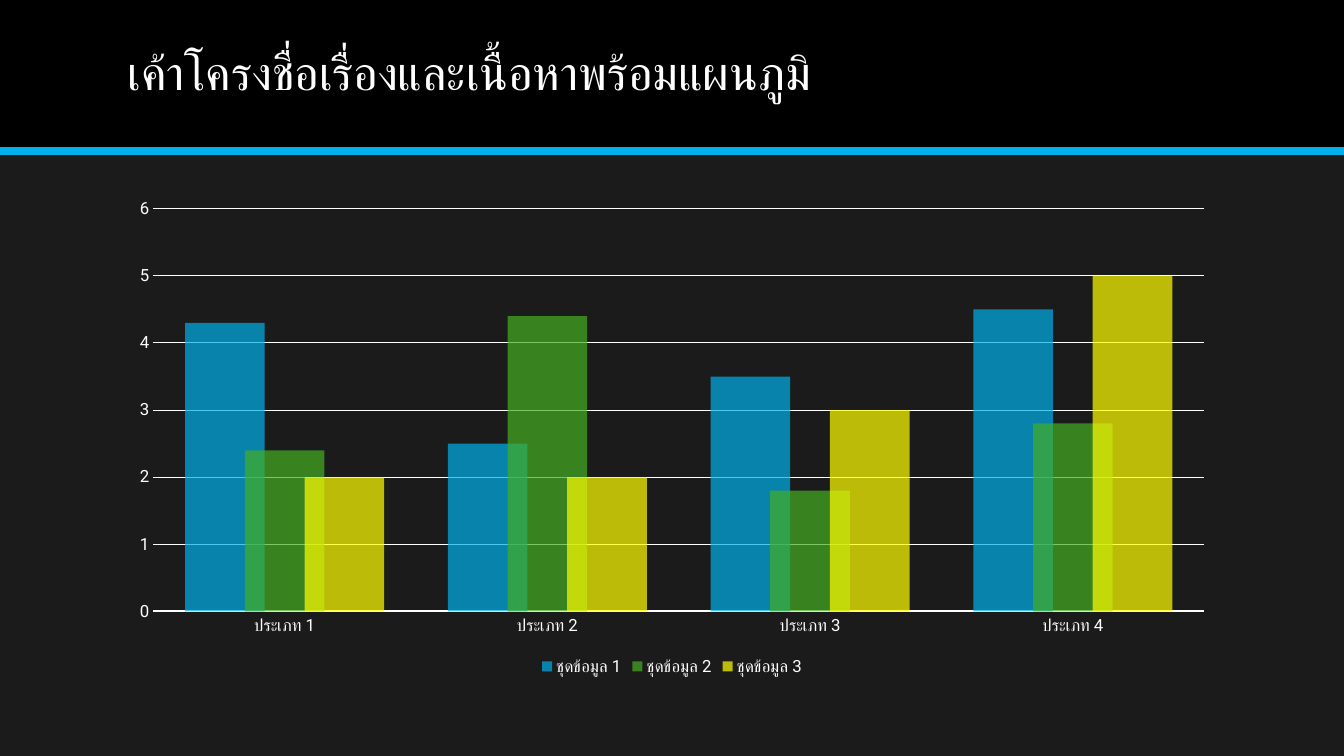
from lxml.etree import SubElement
from pptx import Presentation
from pptx.chart.data import CategoryChartData
from pptx.dml.color import RGBColor
from pptx.enum.chart import XL_CHART_TYPE, XL_LEGEND_POSITION, XL_TICK_MARK
from pptx.enum.shapes import MSO_CONNECTOR, MSO_SHAPE
from pptx.enum.text import MSO_ANCHOR, MSO_AUTO_SIZE, PP_ALIGN
from pptx.oxml.ns import qn
from pptx.util import Inches, Pt

COLORS = {
    "background": "1B1B1B",
    "band": "000000",
    "text": "FFFFFF",
    "blue": "00B0EA",
    "green": "45AE22",
    "yellow": "FFFF00",
}
FONT = "Roboto"
COLUMNS, ROWS = 80, 45
MARGIN, CONTENT_WIDTH = 7, 66
BAND_HEIGHT = 9

CATEGORIES = [f"ประเภท {number}" for number in range(1, 5)]
SERIES = [
    ("ชุดข้อมูล 1", "blue", (4.3, 2.5, 3.5, 4.5)),
    ("ชุดข้อมูล 2", "green", (2.4, 4.4, 1.8, 2.8)),
    ("ชุดข้อมูล 3", "yellow", (2, 2, 3, 5)),
]


def rgb(name):
    return RGBColor.from_string(COLORS[name])


def style_font(font, size):
    font.name = FONT
    font.size = Pt(size)
    font.color.rgb = rgb("text")


def style_line(line, color, width):
    line.color.rgb = rgb(color)
    line.width = Pt(width)


def extend_to_thai(element):
    """Apply each Latin typeface to complex scripts as well."""
    for latin in list(element.iter(qn("a:latin"))):
        thai = SubElement(latin.getparent(), qn("a:cs"), typeface=latin.get("typeface"))
        latin.addnext(thai)


class SlideBuilder:
    """Places elements on a slide by grid columns and rows."""

    def __init__(self, deck):
        self.column = deck.slide_width / COLUMNS
        self.row = deck.slide_height / ROWS
        self.slide = deck.slides.add_slide(deck.slide_layouts[5])
        fill = self.slide.background.fill
        fill.solid()
        fill.fore_color.rgb = rgb("background")

    def box(self, left, top, width, height):
        return (round(left * self.column), round(top * self.row),
                round(width * self.column), round(height * self.row))

    def band(self, *cells):
        band = self.slide.shapes.add_shape(MSO_SHAPE.RECTANGLE, *self.box(*cells))
        band.shadow.inherit = False
        band.fill.solid()
        band.fill.fore_color.rgb = rgb("band")
        band.line.fill.background()

    def rule(self, row, color, width):
        """Draw a horizontal line across the whole slide."""
        rule = self.slide.shapes.add_connector(
            MSO_CONNECTOR.STRAIGHT, *self.box(0, row, COLUMNS, row))
        style_line(rule.line, color, width)
        SubElement(rule.element.spPr, qn("a:effectLst"))

    def title(self, wording, size, *cells):
        title = self.slide.shapes.title
        title.left, title.top, title.width, title.height = self.box(*cells)
        frame = title.text_frame
        frame.word_wrap = True
        frame.auto_size = MSO_AUTO_SIZE.NONE
        frame.vertical_anchor = MSO_ANCHOR.MIDDLE
        paragraph = frame.paragraphs[0]
        paragraph.alignment = PP_ALIGN.LEFT
        paragraph.line_spacing = 0.9
        run = paragraph.add_run()
        run.text = wording
        style_font(run.font, size)
        extend_to_thai(title.element)
        # The placeholder must lie in front of the band.
        title.element.getparent().append(title.element)

    def column_chart(self, *cells):
        data = CategoryChartData()
        data.categories = CATEGORIES
        for name, _, values in SERIES:
            data.add_series(name, values)
        chart = self.slide.shapes.add_chart(
            XL_CHART_TYPE.COLUMN_CLUSTERED, *self.box(*cells), data).chart
        chart.has_title = False
        style_font(chart.font, 10)
        self.format_columns(chart.plots[0])
        self.format_axes(chart)
        chart.has_legend = True
        chart.legend.position = XL_LEGEND_POSITION.BOTTOM
        chart.legend.include_in_layout = False
        style_font(chart.legend.font, 12)
        extend_to_thai(chart.element)

    def format_columns(self, plot):
        plot.gap_width = 80
        plot.overlap = 25
        plot.vary_by_categories = False
        for series, (_, color, _) in zip(plot.series, SERIES):
            fill = series.format.fill
            fill.solid()
            fill.fore_color.rgb = rgb(color)
            series.format.line.fill.background()
            tint = next(series.format.element.iter(qn("a:srgbClr")))
            SubElement(tint, qn("a:alpha"), val="70000")

    def format_axes(self, chart):
        for axis in (chart.category_axis, chart.value_axis):
            axis.major_tick_mark = XL_TICK_MARK.NONE
            axis.minor_tick_mark = XL_TICK_MARK.NONE
            style_font(axis.tick_labels.font, 12)
        style_line(chart.category_axis.format.line, "text", 1.25)
        values = chart.value_axis
        values.minimum_scale, values.maximum_scale, values.major_unit = 0, 6, 1
        values.format.line.fill.background()
        values.has_major_gridlines = True
        style_line(values.major_gridlines.format.line, "text", 0.75)


def main():
    deck = Presentation()
    deck.slide_width, deck.slide_height = Inches(13.33), Inches(7.5)
    builder = SlideBuilder(deck)
    builder.band(0, 0, COLUMNS, BAND_HEIGHT)
    builder.rule(BAND_HEIGHT, "blue", 6)
    builder.title("เค้าโครงชื่อเรื่องและเนื้อหาพร้อมแผนภูมิ", 34,
                  MARGIN, 0.84, CONTENT_WIDTH, 7.2)
    builder.column_chart(MARGIN, 11.25, CONTENT_WIDTH, 29.25)
    deck.save("out.pptx")


if __name__ == "__main__":
    main()
